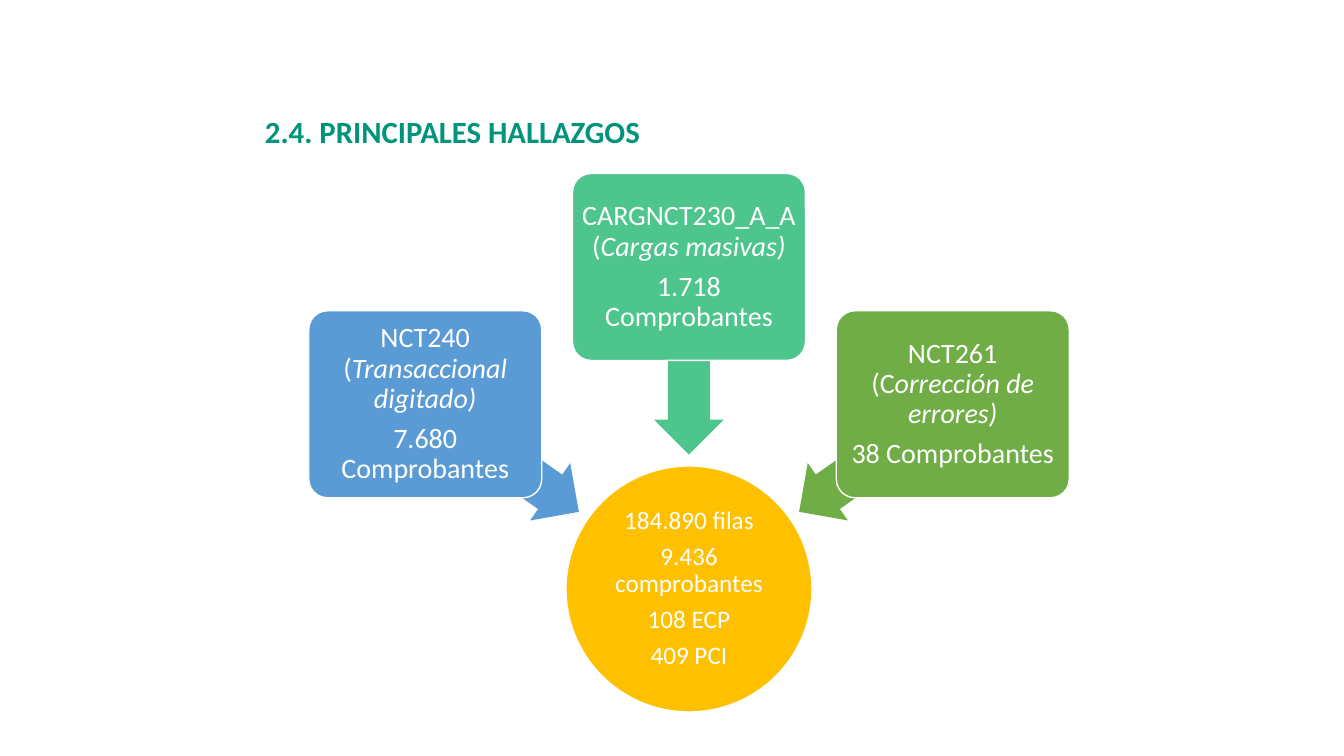
from math import cos, radians, sin
from pptx import Presentation
from pptx.dml.color import RGBColor
from pptx.enum.shapes import MSO_SHAPE
from pptx.enum.text import MSO_ANCHOR, PP_ALIGN
from pptx.util import Pt

PX = 9071.43
WHITE = RGBColor(0xFF, 0xFF, 0xFF)
TEAL = RGBColor(0x00, 0x94, 0x7A)
AMBER = RGBColor(0xFF, 0xC0, 0x00)
BLUE = RGBColor(0x5B, 0x9B, 0xD5)
MINT = RGBColor(0x4D, 0xC5, 0x8D)
GREEN = RGBColor(0x70, 0xAD, 0x47)

TITLE = "2.4. PRINCIPALES HALLAZGOS"
TOTALS = ["184.890 filas", "9.436 comprobantes", "108 ECP", "409 PCI"]
SOURCES = [
    (215, BLUE, "NCT240 (", "Transaccional digitado)", "7.680 Comprobantes"),
    (270, MINT, "CARGNCT230_A_A (", "Cargas masivas)", "1.718 Comprobantes"),
    (325, GREEN, "NCT261 (C", "orrección de errores)", "38 Comprobantes"),
]

HUB_X, HUB_Y, HUB_SIZE = 689, 589, 246
ARROW_DISTANCE, ARROW_W, ARROW_H = 228, 187, 70
SOURCE_DISTANCE, SOURCE_W, SOURCE_H = 322, 233, 187


def px(length):
    return round(length * PX)


def write(shape, paragraphs, size, color, bold=False, after=0,
          anchor=MSO_ANCHOR.MIDDLE, inset=10):
    frame = shape.text_frame
    frame.word_wrap = True
    frame.vertical_anchor = anchor
    frame.margin_left = frame.margin_right = px(inset)
    frame.margin_top = frame.margin_bottom = px(min(inset, 5))
    for index, runs in enumerate(paragraphs):
        paragraph = frame.add_paragraph() if index else frame.paragraphs[0]
        paragraph.alignment = PP_ALIGN.CENTER
        paragraph.line_spacing = 0.9
        paragraph.space_before = Pt(0)
        paragraph.space_after = Pt(after)
        for text, italic in runs:
            run = paragraph.add_run()
            run.text = text
            run.font.name = "Calibri"
            run.font.size = Pt(size)
            run.font.bold = bold
            run.font.italic = italic
            run.font.color.rgb = color


def add_centred(kind, x, y, width, height, fill, outlined=True):
    shape = slide.shapes.add_shape(
        kind, px(x - width / 2), px(y - height / 2), px(width), px(height))
    shape.shadow.inherit = False
    shape.fill.solid()
    shape.fill.fore_color.rgb = fill
    if outlined:
        shape.line.color.rgb = WHITE
        shape.line.width = Pt(1)
    else:
        shape.line.fill.background()
    return shape


def around_hub(angle, distance):
    return (HUB_X + distance * cos(radians(angle)),
            HUB_Y + distance * sin(radians(angle)))


prs = Presentation()
prs.slide_width, prs.slide_height = px(1344), px(756)
slide = prs.slides.add_slide(prs.slide_layouts[5])

title = slide.shapes.title
title.left, title.top, title.width, title.height = px(0), px(18), px(905), px(137)
write(title, [[(TITLE, False)]], 22, TEAL, bold=True, anchor=MSO_ANCHOR.BOTTOM)

hub = add_centred(MSO_SHAPE.OVAL, HUB_X, HUB_Y, HUB_SIZE, HUB_SIZE, AMBER)
write(hub, [[(total, False)] for total in TOTALS], 18, WHITE, after=6.3, inset=1)

for angle, color, code, purpose, count in SOURCES:
    arrow = add_centred(MSO_SHAPE.LEFT_ARROW, *around_hub(angle, ARROW_DISTANCE),
                        ARROW_W, ARROW_H, color, outlined=False)
    arrow.rotation = angle
    arrow.adjustments[0], arrow.adjustments[1] = 0.6, 0.5

    source = add_centred(MSO_SHAPE.ROUNDED_RECTANGLE,
                         *around_hub(angle, SOURCE_DISTANCE),
                         SOURCE_W, SOURCE_H, color)
    source.adjustments[0] = 0.1
    write(source, [[(code, False), (purpose, True)], [(count, False)]],
          20, WHITE, after=7, inset=3)

prs.save("out.pptx")
